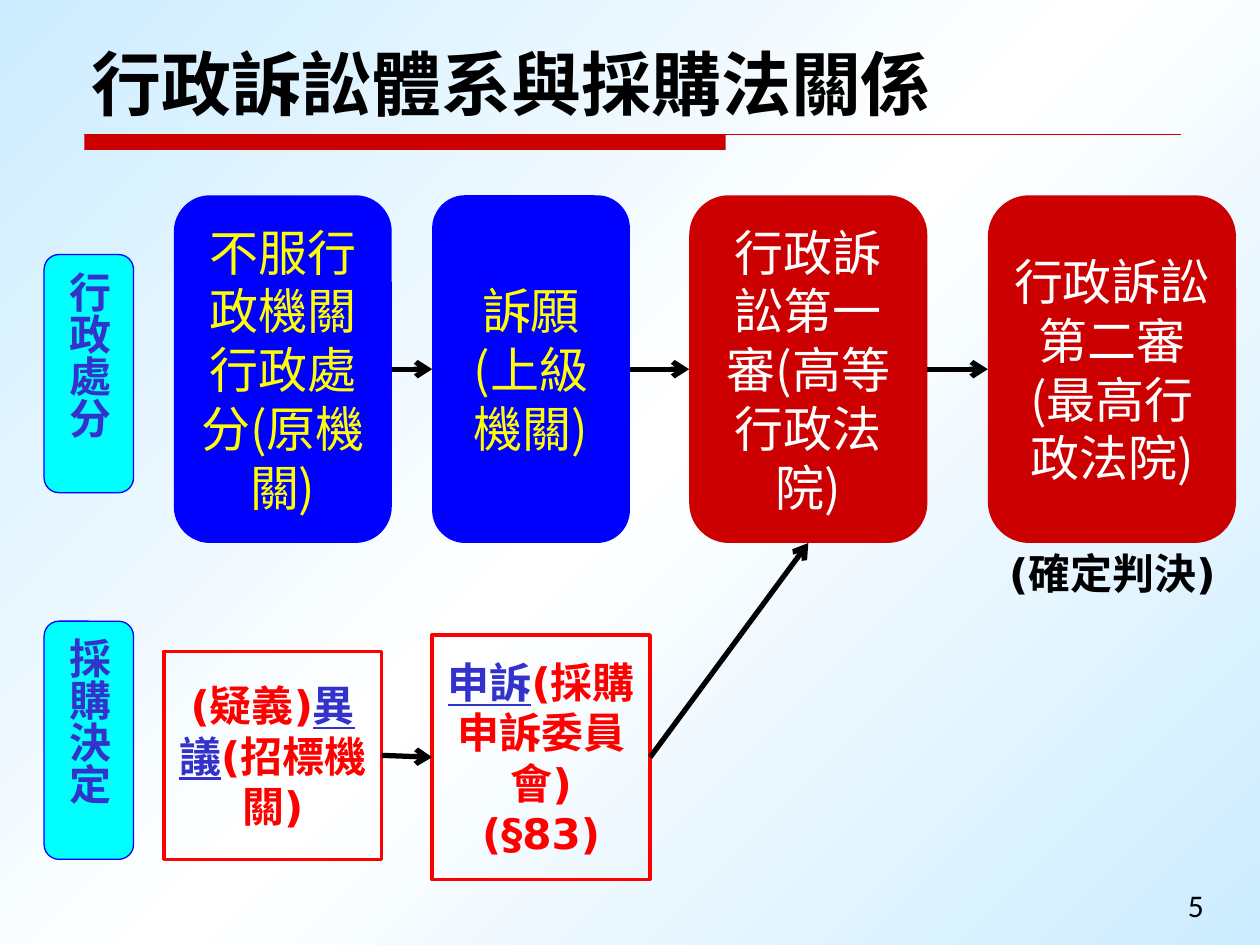
from dataclasses import dataclass

from lxml import etree
from pptx import Presentation
from pptx import util as u
from pptx.dml.color import RGBColor
from pptx.enum import shapes, text
from pptx.oxml import parse_xml
from pptx.oxml.ns import nsdecls, qn


@dataclass(frozen=True)
class Theme:
    sky: str = "CCECFF"
    white: str = "FFFFFF"
    black: str = "000000"
    blue: str = "0000FF"
    crimson: str = "CC0000"
    red: str = "FF0000"
    yellow: str = "FFFF00"
    cyan: str = "00FFFF"
    indigo: str = "3333CC"
    heading_size: int = 40
    stage_size: int = 28
    note_size: int = 24
    number_size: int = 18
    heading_font: str = "DejaVu Sans"
    stage_font: str = "Noto Sans CJK SC"
    number_font: str = "Calibri"


class FlowSlide:
    def __init__(self, deck, theme):
        self.theme = theme
        self.slide = deck.slides.add_slide(deck.slide_layouts[6])

    def background(self):
        colors = (self.theme.sky, self.theme.white, self.theme.sky)
        stops = "".join(
            f'<a:gs pos="{i * 50000}"><a:srgbClr val="{color}"/></a:gs>'
            for i, color in enumerate(colors))
        self.slide.element.cSld.insert(0, parse_xml(
            f'<p:bg {nsdecls("p", "a")}><p:bgPr><a:gradFill rotWithShape="1">'
            f'<a:gsLst>{stops}</a:gsLst><a:lin ang="2700000" scaled="1"/>'
            '</a:gradFill><a:effectLst/></p:bgPr></p:bg>'))

    def wording(self, holder, paragraphs, size, font, bold=False,
                align=text.PP_ALIGN.LEFT, anchor=text.MSO_ANCHOR.TOP,
                before=0):
        frame = holder.text_frame
        frame.word_wrap = True
        frame.vertical_anchor = anchor
        for i, pieces in enumerate(paragraphs):
            paragraph = frame.add_paragraph() if i else frame.paragraphs[0]
            layout = {"alignment": align, "space_before": u.Pt(before)}
            for name, value in layout.items():
                setattr(paragraph, name, value)
            for words, color, underline in pieces:
                run = paragraph.add_run()
                run.text = words
                look = {"size": u.Pt(size), "name": font, "bold": bold,
                        "underline": underline}
                for name, value in look.items():
                    setattr(run.font, name, value)
                run.font.color.rgb = RGBColor.from_string(color)

    def label(self, box, words, size, font, **style):
        holder = self.slide.shapes.add_textbox(*map(u.Inches, box))
        self.wording(holder, [[(words, self.theme.black, False)]],
                     size, font, **style)

    def panel(self, kind, box, fill=None, line=None, width=0.75):
        panel = self.slide.shapes.add_shape(kind, *map(u.Inches, box))
        panel.shadow.inherit = False
        for part, color in ((panel.fill, fill), (panel.line.fill, line)):
            if color:
                part.solid()
                part.fore_color.rgb = RGBColor.from_string(color)
            else:
                part.background()
        if line:
            panel.line.width = u.Pt(width)
        return panel

    def stage(self, left, width, words, fill, color):
        box = self.panel(shapes.MSO_SHAPE.ROUNDED_RECTANGLE,
                         (left, 1.55, width, 2.76), fill)
        self.wording(box, [[(words, color, False)]], self.theme.stage_size,
                     self.theme.stage_font, align=text.PP_ALIGN.CENTER,
                     anchor=text.MSO_ANCHOR.MIDDLE)
        return box

    def remedy(self, box, paragraphs):
        frame = self.panel(shapes.MSO_SHAPE.RECTANGLE, box,
                           line=self.theme.red, width=2)
        self.wording(frame, paragraphs, self.theme.note_size,
                     self.theme.heading_font, bold=True,
                     align=text.PP_ALIGN.CENTER,
                     anchor=text.MSO_ANCHOR.MIDDLE)
        return frame

    def track(self, top, words):
        tag = self.panel(shapes.MSO_SHAPE.ROUNDED_RECTANGLE,
                         (0.35, top, 0.71, 1.89), self.theme.cyan,
                         self.theme.blue)
        self.wording(tag, [[(words, self.theme.indigo, False)]],
                     self.theme.note_size, self.theme.heading_font, bold=True,
                     align=text.PP_ALIGN.CENTER,
                     anchor=text.MSO_ANCHOR.MIDDLE)
        tag.text_frame.word_wrap = False
        tag.text_frame._txBody.bodyPr.set("vert", "eaVert")

    def line(self, color, width, ends=(0, 0, 0, 0)):
        line = self.slide.shapes.add_connector(
            shapes.MSO_CONNECTOR.STRAIGHT, *map(u.Inches, ends))
        line.line.color.rgb = RGBColor.from_string(color)
        line.line.width = u.Pt(width)
        etree.SubElement(line._element.spPr, qn("a:effectLst"))
        return line

    def arrow(self, source, target, target_site=1):
        arrow = self.line(self.theme.black, 3)
        arrow.begin_connect(source, 3)
        arrow.end_connect(target, target_site)
        etree.SubElement(arrow.line._get_or_add_ln(), qn("a:tailEnd"),
                         type="arrow")


def main():
    deck = Presentation()
    deck.slide_width, deck.slide_height = u.Inches(10), u.Inches(7.5)
    theme = Theme()
    flow = FlowSlide(deck, theme)
    flow.background()

    flow.panel(shapes.MSO_SHAPE.RECTANGLE, (0.67, 1.07, 5.09, 0.12),
               theme.crimson)
    flow.line(theme.crimson, 0.75, (0.67, 1.07, 9.37, 1.07))
    flow.label((9.33, 6.98, 0.45, 0.5), "5", theme.number_size,
               theme.number_font)
    flow.label((0.63, 0.2, 8.75, 0.84), "行政訴訟體系與採購法關係",
               theme.heading_size, theme.heading_font, bold=True,
               anchor=text.MSO_ANCHOR.BOTTOM)

    agency = (theme.blue, theme.yellow)
    court = (theme.crimson, theme.white)
    stages = [flow.stage(left, width, words, *colors)
              for left, width, words, colors in (
                  (1.38, 1.73, "不服行政機關行政處分(原機關)", agency),
                  (3.43, 1.57, "訴願(上級機關)", agency),
                  (5.47, 1.89, "行政訴訟第一審(高等行政法院)", court),
                  (7.84, 1.97, "行政訴訟第二審(最高行政法院)", court))]
    for source, target in zip(stages, stages[1:]):
        flow.arrow(source, target)

    objection = flow.remedy((1.3, 5.17, 1.73, 1.65), [[
        ("(疑義)", theme.red, False),
        ("異議", theme.indigo, True),
        ("(招標機關)", theme.red, False)]])
    flow.label((7.91, 4.3, 1.89, 0.5), "(確定判決)", theme.note_size,
               theme.heading_font, bold=True, before=14)
    complaint = flow.remedy((3.43, 5.04, 1.73, 1.94), [
        [("申訴", theme.indigo, True),
         ("(採購申訴委員會)", theme.red, False)],
        [("(§83)", theme.red, False)]])
    flow.arrow(objection, complaint)
    flow.arrow(complaint, stages[2], target_site=2)

    for top, words in ((2.02, "行政處分"), (4.93, "採購決定")):
        flow.track(top, words)

    deck.save("out.pptx")


if __name__ == "__main__":
    main()
